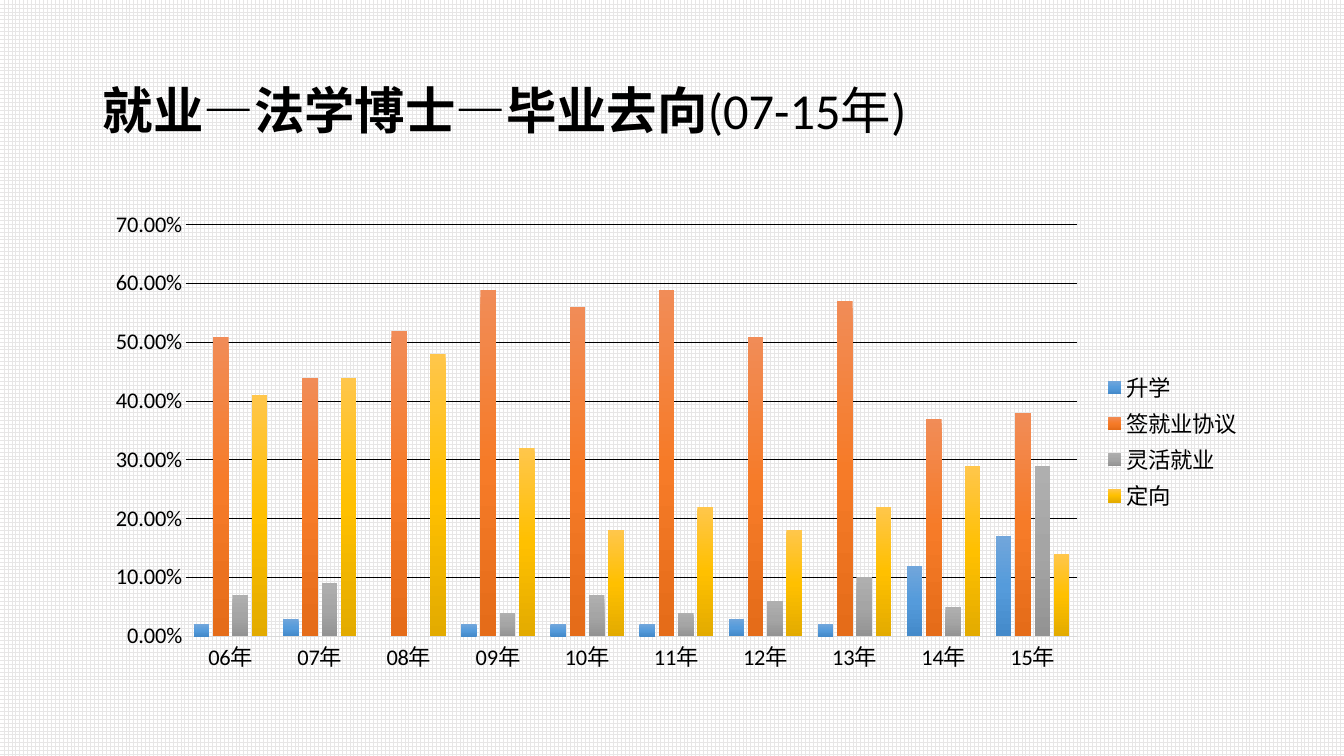
from pptx import Presentation
from pptx.chart.data import CategoryChartData
from pptx.dml.color import RGBColor as RGB
from pptx.enum.chart import XL_CHART_TYPE as Kind, XL_LEGEND_POSITION as Place, XL_TICK_MARK as Tick
from pptx.enum.dml import MSO_PATTERN as Pattern
from pptx.enum.text import MSO_ANCHOR as Anchor, PP_ALIGN as Align
from pptx.oxml import parse_xml
from pptx.oxml.ns import nsdecls, qn
from pptx.util import Inches, Pt

HUES = {"ink": "000000", "paper": "FFFFFF", "mesh": "E7E6E6", "axis": "D9D9D9"}
LATIN, HAN = "Calibri", "Noto Sans CJK SC"


def color(name):
    return RGB.from_string(HUES[name])


def style(font, size):
    font.size = Pt(size)
    font.name = LATIN
    font.color.rgb = color("ink")


deck = Presentation()
deck.slide_width, deck.slide_height = Inches(13.33), Inches(7.5)
slide = deck.slides.add_slide(deck.slide_layouts[5])

# Grid background
back = slide.background.fill
back.patterned()
back.pattern = Pattern.LARGE_GRID
back.fore_color.rgb = color("mesh")
back.back_color.rgb = color("paper")

# Title
title = slide.shapes.title
title.left, title.top = Inches(0.92), Inches(0.4)
title.width, title.height = Inches(11.5), Inches(1.45)
frame = title.text_frame
frame.word_wrap = True
frame.vertical_anchor = Anchor.MIDDLE
para = frame.paragraphs[0]
para.alignment = Align.LEFT
para.line_spacing = 0.9
for text, face, bold in [("就业—法学博士—毕业去向", HAN, True), ("(07-15年)", LATIN, False)]:
    run = para.add_run()
    run.text = text
    style(run.font, 36)
    run.font.name = face
    run.font.bold = bold
    latin = run.font._element.find(qn("a:latin"))
    latin.addnext(parse_xml(f'<a:ea {nsdecls("a")} typeface="{HAN}"/>'))

# Shares by year, with the three gradient colours of each series
groups = [
    ("升学", [0.02, 0.03, 0, 0.02, 0.02, 0.02, 0.03, 0.02, 0.12, 0.17],
     ["71A6DB", "559BDB", "448ACA"]),
    ("签就业协议", [0.51, 0.44, 0.52, 0.59, 0.56, 0.59, 0.51, 0.57, 0.37, 0.38],
     ["F18C57", "F67B28", "E56C19"]),
    ("灵活就业", [0.07, 0.09, 0, 0.04, 0.07, 0.04, 0.06, 0.1, 0.05, 0.29],
     ["AFAFAF", "A5A5A5", "939393"]),
    ("定向", [0.41, 0.44, 0.48, 0.32, 0.18, 0.22, 0.18, 0.22, 0.29, 0.14],
     ["FFC64B", "FFC000", "E3AB00"]),
]
data = CategoryChartData(number_format="0.00%")
data.categories = [f"{year:02}年" for year in range(6, 16)]
for name, shares, _ in groups:
    data.add_series(name, shares)

# Column chart
chart = slide.shapes.add_chart(Kind.COLUMN_CLUSTERED, Inches(0.92), Inches(2),
                               Inches(11.5), Inches(4.76), data).chart
chart.has_title = False
style(chart.font, 16)
plot = chart.plots[0]
plot.gap_width, plot.overlap = 100, -24
plot.vary_by_categories = False
for bars, (_, _, shades) in zip(plot.series, groups):
    bars.invert_if_negative = False
    stops = "".join(f'<a:gs pos="{i * 50000}"><a:srgbClr val="{shade}"/></a:gs>'
                    for i, shade in enumerate(shades))
    bars.format.fill.background()
    blank = bars.format._element.spPr.find(qn("a:noFill"))
    blank.getparent().replace(blank, parse_xml(
        f'<a:gradFill {nsdecls("a")} rotWithShape="1"><a:gsLst>{stops}</a:gsLst>'
        '<a:lin ang="5400000" scaled="0"/></a:gradFill>'))

# Axes
years, rates = chart.category_axis, chart.value_axis
for axis in (years, rates):
    axis.major_tick_mark = axis.minor_tick_mark = Tick.NONE
    style(axis.tick_labels.font, 16)
years.format.line.color.rgb = color("axis")
years.format.line.width = Pt(1)
rates.format.line.fill.background()
rates.minimum_scale, rates.maximum_scale, rates.major_unit = 0, 0.7, 0.1
rates.tick_labels.number_format = "0.00%"
rates.tick_labels.number_format_is_linked = False
grid = rates.major_gridlines.format.line
grid.color.rgb = color("ink")
grid.width = Pt(0.75)

# Legend
chart.has_legend = True
chart.legend.position = Place.RIGHT
chart.legend.include_in_layout = False
style(chart.legend.font, 16)

deck.save("out.pptx")
